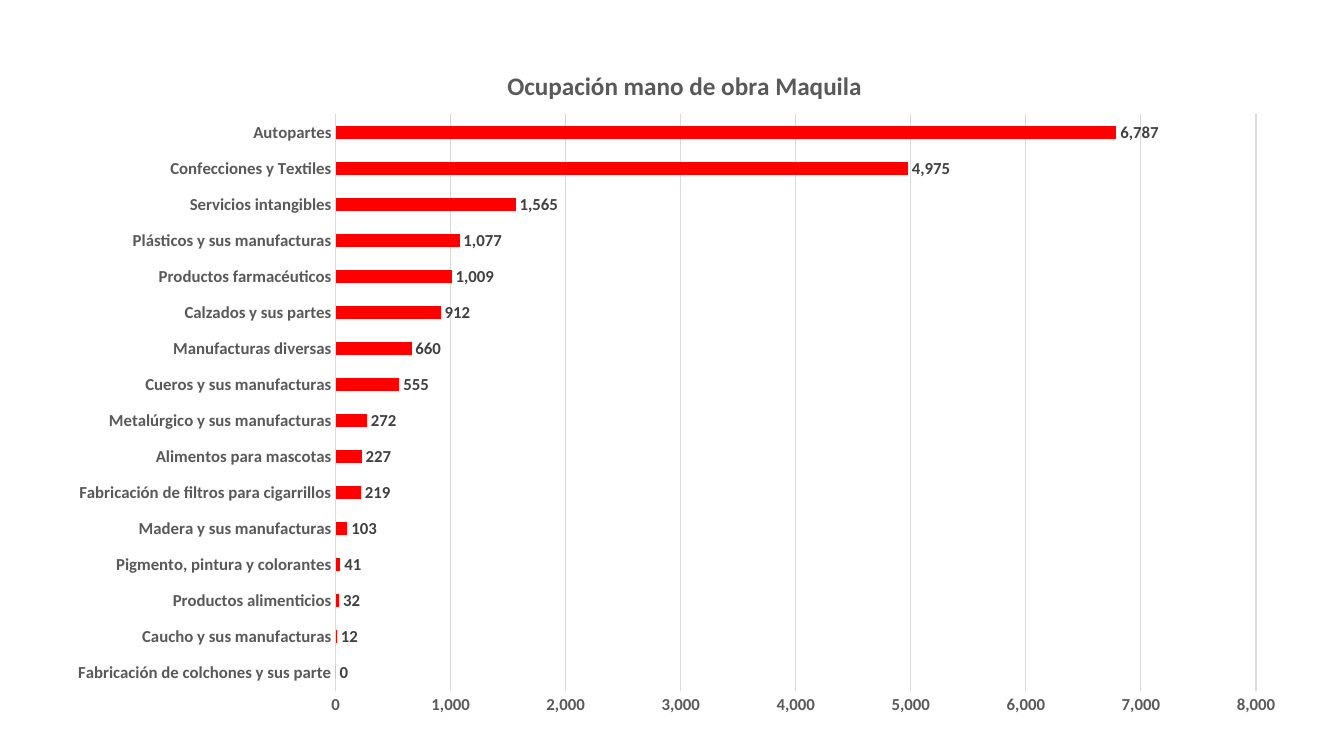
from lxml import etree
from pptx import Presentation
from pptx import util as u
from pptx.chart.data import CategoryChartData
from pptx.dml.color import RGBColor
from pptx.enum import chart as ch
from pptx.oxml import ns

WIDE, HIGH = 13.33, 7.5
RED = RGBColor(0xFF, 0x00, 0x00)
GREY = RGBColor(0x59, 0x59, 0x59)
DARK = RGBColor(0x40, 0x40, 0x40)
PALE = RGBColor(0xD9, 0xD9, 0xD9)
FORM = "#,##0"
JOBS = {
    "Fabricación de colchones y sus parte": 0,
    "Caucho y sus manufacturas": 12,
    "Productos alimenticios": 32,
    "Pigmento, pintura y colorantes": 41,
    "Madera y sus manufacturas": 103,
    "Fabricación de filtros para cigarrillos": 219,
    "Alimentos para mascotas": 227,
    "Metalúrgico y sus manufacturas": 272,
    "Cueros y sus manufacturas": 555,
    "Manufacturas diversas": 660,
    "Calzados y sus partes": 912,
    "Productos farmacéuticos": 1009,
    "Plásticos y sus manufacturas": 1077,
    "Servicios intangibles": 1565,
    "Confecciones y Textiles": 4975,
    "Autopartes": 6787,
}


def put(item, **vals):
    """Set each named attribute of an item."""
    for name, val in vals.items():
        setattr(item, name, val)


def style(font, size, color):
    """Make a font bold Calibri in the given size and colour."""
    put(font, name="Calibri", size=u.Pt(size), bold=True)
    font.color.rgb = color


def rule(line):
    """Draw a line thin and pale."""
    line.width = u.Pt(0.75)
    line.color.rgb = PALE


def place(node, index, **vals):
    """Fix the layout of a chart part as shares of the chart."""
    for old in node.findall(ns.qn("c:layout")):
        node.remove(old)
    outer = etree.Element(ns.qn("c:layout"))
    inner = etree.SubElement(outer, ns.qn("c:manualLayout"))
    for tag, val in vals.items():
        etree.SubElement(inner, ns.qn("c:" + tag)).set("val", str(val))
    node.insert(index, outer)


def title(chart, words):
    """Write the chart title."""
    head = chart.chart_title
    run = head.text_frame.paragraphs[0].add_run()
    run.text = words
    style(run.font, 18, GREY)
    head.include_in_layout = False
    place(head._element, 1, xMode="edge", yMode="edge", x=0.36, y=0.04)


def axes(chart):
    """Format both axes and the grid."""
    for axis in (chart.category_axis, chart.value_axis):
        put(axis, major_tick_mark=ch.XL_TICK_MARK.NONE,
            minor_tick_mark=ch.XL_TICK_MARK.NONE)
        style(axis.tick_labels.font, 12, GREY)
    cats, vals = chart.category_axis, chart.value_axis
    cats.has_major_gridlines = False
    rule(cats.format.line)
    put(vals, minimum_scale=0, maximum_scale=8000, major_unit=1000)
    put(vals.tick_labels, number_format=FORM, number_format_is_linked=False)
    vals.format.line.fill.background()
    rule(vals.major_gridlines.format.line)


def bars(plot):
    """Colour the bars and label their ends."""
    put(plot, gap_width=182, vary_by_categories=False)
    fill = plot.series[0].format.fill
    fill.solid()
    fill.fore_color.rgb = RED
    tags = plot.series[0].data_labels
    put(tags, show_value=True, number_format=FORM, number_format_is_linked=False,
        position=ch.XL_LABEL_POSITION.OUTSIDE_END)
    style(tags.font, 12, DARK)


def graph(slide, left, top, width, height):
    """Build the bar chart in the given box."""
    data = CategoryChartData(number_format=FORM)
    data.categories = list(JOBS)
    data.add_series("Series 1", list(JOBS.values()))
    box = [u.Inches(n) for n in (left, top, width, height)]
    chart = slide.shapes.add_chart(ch.XL_CHART_TYPE.BAR_CLUSTERED, *box, data).chart
    put(chart, has_legend=False, has_title=True)
    put(chart.font, name="Calibri", size=u.Pt(10))
    title(chart, "Ocupación mano de obra Maquila")
    axes(chart)
    bars(chart.plots[0])
    area = chart._chartSpace.find(".//" + ns.qn("c:plotArea"))
    place(area, 0, layoutTarget="inner", xMode="edge", yMode="edge",
          x=0.226, y=0.113, w=0.738, h=0.833)


def main():
    """Make the deck and save it."""
    deck = Presentation()
    put(deck, slide_width=u.Inches(WIDE), slide_height=u.Inches(HIGH))
    slide = deck.slides.add_slide(deck.slide_layouts[6])
    graph(slide, 0.04 * WIDE, 0.048 * HIGH, 0.928 * WIDE, 0.915 * HIGH)
    deck.save("out.pptx")


if __name__ == "__main__":
    main()
